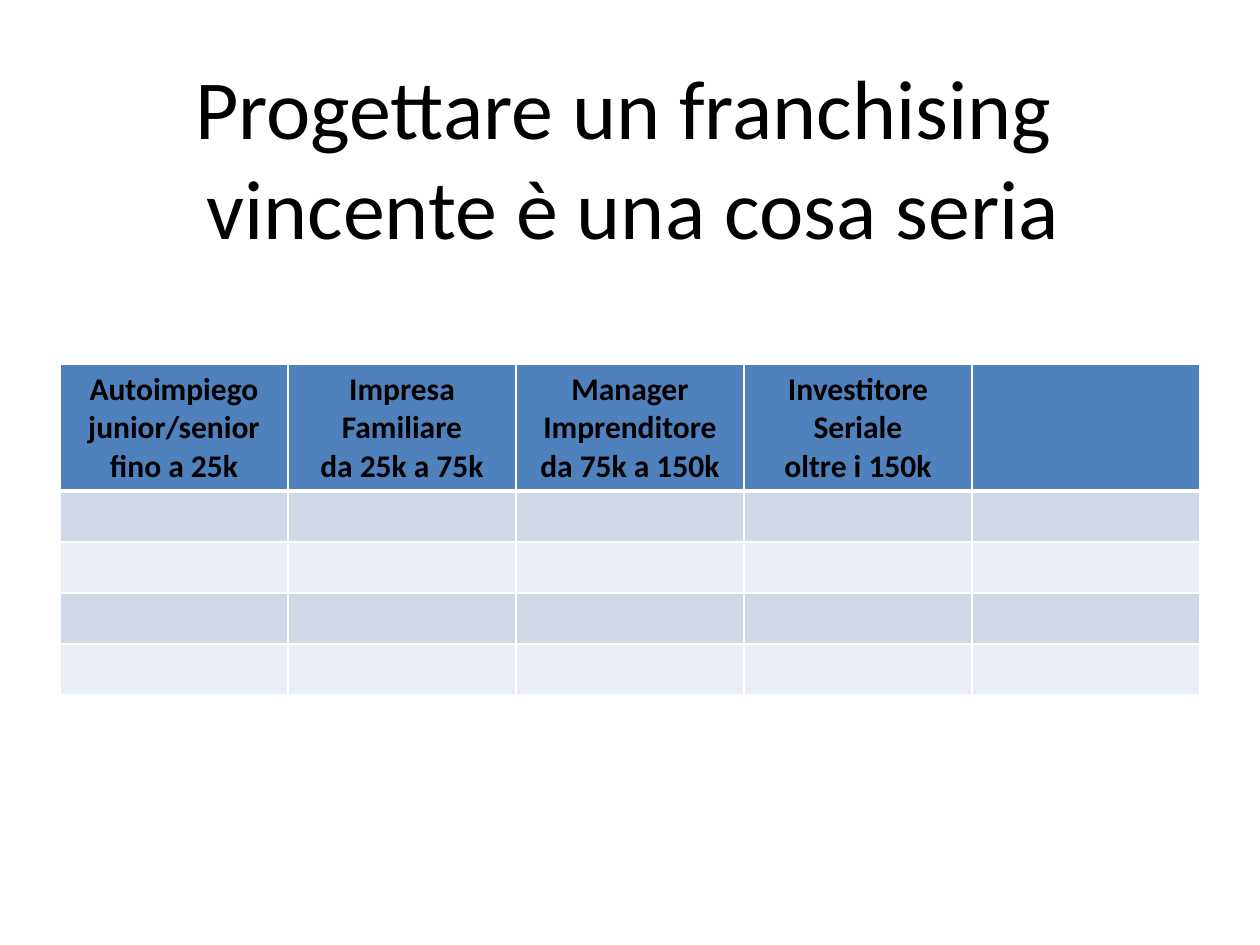
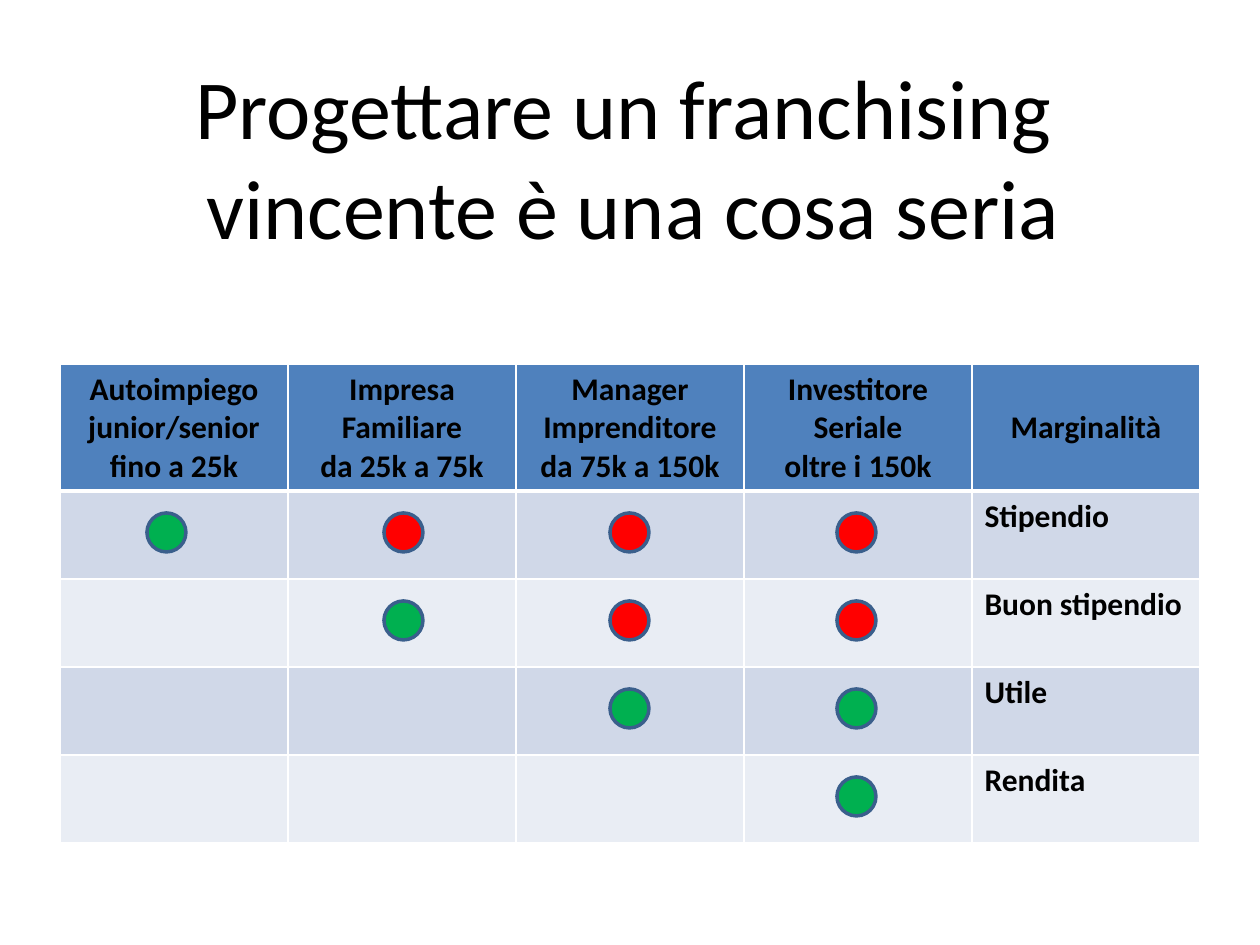
from lxml.etree import SubElement
from pptx import Presentation
from pptx.dml.color import RGBColor
from pptx.enum.shapes import MSO_SHAPE
from pptx.enum.text import MSO_ANCHOR, MSO_AUTO_SIZE, PP_ALIGN
from pptx.oxml.ns import qn
from pptx.util import Emu, Pt

# Content
TITLE = ["Progettare un franchising ", "vincente è una cosa seria"]
INVESTORS = [
    ["Autoimpiego", "junior/senior", "fino a 25k"],
    ["Impresa Familiare", "da 25k a 75k"],
    ["Manager", "Imprenditore", "da 75k a 150k"],
    ["Investitore", "Seriale", "oltre i 150k"],
]
MARGINS = ["Stipendio", "Buon stipendio", "Utile", "Rendita"]
# One string per margin row, one letter per investor: g green, r red, - none
RATINGS = ["grrr", "-grr", "--gg", "---g"]
SLIDES = [
    {"last_header": [], "margins": [""] * 4, "ratings": [], "row_h": 51},
    {"last_header": ["Marginalità"], "margins": MARGINS, "ratings": RATINGS, "row_h": 88},
]

# Theme and layout, lengths in px
THEME = {
    "font": "Calibri", "title_size": 48, "table_size": 18,
    "text": "000000", "border": "FFFFFF", "header": "4F81BD",
    "bands": ["D0D8E8", "E9EDF4"],
    "dot_line": "3A5F8C", "g": "00B050", "r": "FF0000",
}
SLIDE_W, SLIDE_H = 1260, 945
TITLE_BOX = (177, 49, 912, 217)
TABLE_X, TABLE_Y, COL_W, HEADER_H = 60, 364, 228, 127
DOT_XS, DOT_DY, DOT_SIZE = [147, 384, 610, 837], 22, 39


def px(n):
    return Emu(round(n * 914400 / 126))


def rgb(name):
    return RGBColor.from_string(THEME.get(name, name))


def write(tf, lines, size, align, bold=False):
    """Fill a text frame with one paragraph per line."""
    style = {"name": THEME["font"], "size": Pt(size), "bold": bold}
    for i, line in enumerate(lines or [""]):
        p = tf.paragraphs[0] if i == 0 else tf.add_paragraph()
        p.alignment = align
        fonts = [p.font]
        if line:
            r = p.add_run()
            r.text = line
            fonts = [r.font]
        else:
            # An empty cell keeps its line height through the end mark
            SubElement(p._p, qn("a:endParaRPr"), sz=str(size * 100))
        for font in fonts:
            for key, value in style.items():
                setattr(font, key, value)
            font.color.rgb = rgb("text")


def set_borders(cell, **widths):
    tc_pr = cell._tc.get_or_add_tcPr()
    for side in "LRTB":
        ln = SubElement(tc_pr, qn(f"a:ln{side}"), w=str(Pt(widths.get(side, 1))))
        fill = SubElement(ln, qn("a:solidFill"))
        SubElement(fill, qn("a:srgbClr"), val=THEME["border"])


def add_title(s):
    tf = s.shapes.add_textbox(*map(px, TITLE_BOX)).text_frame
    tf.word_wrap = False
    tf.auto_size = MSO_AUTO_SIZE.SHAPE_TO_FIT_TEXT
    write(tf, TITLE, THEME["title_size"], PP_ALIGN.CENTER)


def add_margin_table(s, last_header, margins, row_h):
    headers = INVESTORS + [last_header]
    rows = [headers] + [[[]] * len(INVESTORS) + [[m]] for m in margins]
    box = (TABLE_X, TABLE_Y, COL_W * len(headers), HEADER_H + row_h * len(margins))
    table = s.shapes.add_table(len(rows), len(headers), *map(px, box)).table
    for col in table.columns:
        col.width = px(COL_W)
    for i, row in enumerate(rows):
        table.rows[i].height = px(row_h if i else HEADER_H)
        for j, lines in enumerate(row):
            cell = table.cell(i, j)
            set_borders(cell, **({0: {"B": 3}, 1: {"T": 3}}.get(i, {})))
            cell.fill.solid()
            cell.fill.fore_color.rgb = rgb(THEME["bands"][(i - 1) % 2] if i else "header")
            cell.vertical_anchor = MSO_ANCHOR.TOP if i else MSO_ANCHOR.MIDDLE
            align = PP_ALIGN.LEFT if i else PP_ALIGN.CENTER
            write(cell.text_frame, lines, THEME["table_size"], align, bold=True)


def add_dots(s, ratings, row_h):
    for i, row in enumerate(ratings):
        y = TABLE_Y + HEADER_H + i * row_h + DOT_DY
        for x, rating in zip(DOT_XS, row):
            if rating == "-":
                continue
            sp = s.shapes.add_shape(MSO_SHAPE.OVAL, *map(px, (x, y, DOT_SIZE, DOT_SIZE)))
            sp.shadow.inherit = False
            sp.fill.solid()
            sp.fill.fore_color.rgb = rgb(rating)
            sp.line.color.rgb = rgb("dot_line")
            sp.line.width = Pt(2)


def main():
    prs = Presentation()
    prs.slide_width, prs.slide_height = px(SLIDE_W), px(SLIDE_H)
    for page in SLIDES:
        s = prs.slides.add_slide(prs.slide_layouts[6])
        add_title(s)
        add_margin_table(s, page["last_header"], page["margins"], page["row_h"])
        add_dots(s, page["ratings"], page["row_h"])
    prs.save("out.pptx")


if __name__ == "__main__":
    main()
